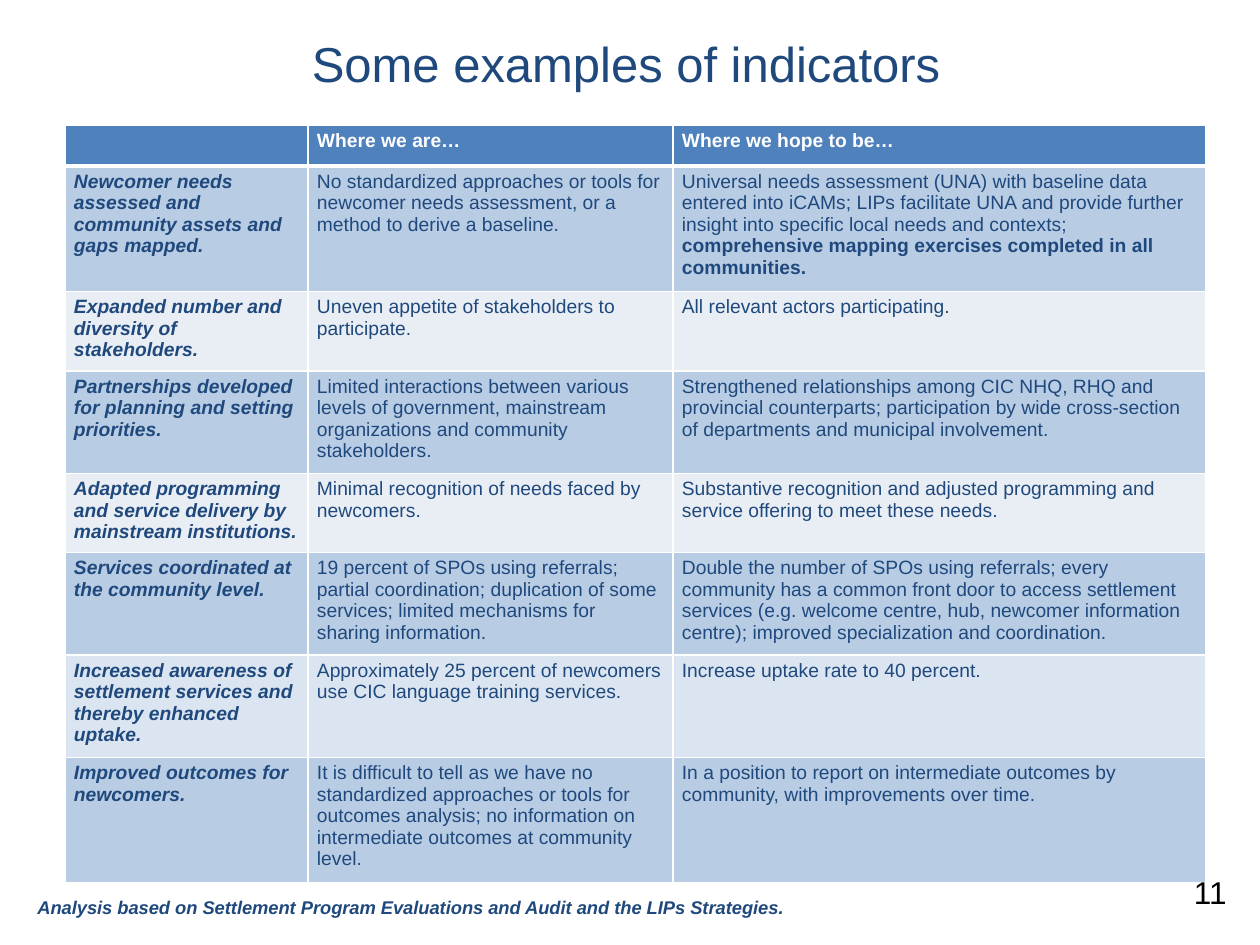
from dataclasses import dataclass

from lxml.etree import SubElement
from pptx import Presentation
from pptx.dml.color import RGBColor
from pptx.enum.text import MSO_ANCHOR, PP_ALIGN
from pptx.oxml.ns import qn
from pptx.util import Emu, Pt

PIXEL = 914400 // 126
NAVY = "1F497D"
WHITE = "FFFFFF"
HEADER_FILL = "4F81BD"
BLUE_BAND = "B8CCE4"
GREY_BAND = "E9EDF4"
PALE_BAND = "DBE5F1"
COLUMN_WIDTHS = [243, 365, 533]
HEADER_HEIGHT = 41
HEADINGS = ["", "Where we are…", "Where we hope to be…"]


@dataclass
class Box:
    left: int
    top: int
    width: int
    height: int

    def lengths(self) -> list[Emu]:
        return [px(value) for value in (self.left, self.top, self.width, self.height)]


@dataclass
class Style:
    size: float
    color: str = NAVY
    bold: bool = False
    italic: bool = False


@dataclass
class Indicator:
    height: int
    fill: str
    name: str
    current: str
    goal: str
    emphasis: str = ""


INDICATORS = [
    Indicator(125, BLUE_BAND, "Newcomer needs assessed and community assets and gaps mapped.",
              "No standardized approaches or tools for newcomer needs assessment, "
              "or a method to derive a baseline.",
              "Universal needs assessment (UNA) with baseline data entered into iCAMs; "
              "LIPs facilitate UNA and provide further insight into specific local needs "
              "and contexts; ",
              "comprehensive mapping exercises completed in all communities."),
    Indicator(79, GREY_BAND, "Expanded number and diversity of stakeholders.",
              "Uneven appetite of stakeholders to participate.",
              "All relevant actors participating."),
    Indicator(101, BLUE_BAND, "Partnerships developed for planning and setting priorities.",
              "Limited interactions between various levels of government, mainstream "
              "organizations and community stakeholders.",
              "Strengthened relationships among CIC NHQ, RHQ and provincial counterparts; "
              "participation by wide cross-section of departments and municipal involvement."),
    Indicator(78, GREY_BAND,
              "Adapted programming and service delivery by mainstream institutions.",
              "Minimal recognition of needs faced by newcomers.",
              "Substantive recognition and adjusted programming and service offering "
              "to meet these needs."),
    Indicator(102, BLUE_BAND, "Services coordinated at the community level.",
              "19 percent of SPOs using referrals; partial coordination; duplication of some "
              "services; limited mechanisms for sharing information.",
              "Double the number of SPOs using referrals; every community has a common front "
              "door to access settlement services (e.g. welcome centre, hub, newcomer "
              "information centre); improved specialization and coordination."),
    Indicator(101, PALE_BAND,
              "Increased awareness of settlement services and thereby enhanced uptake.",
              "Approximately 25 percent of newcomers use CIC language training services.",
              "Increase uptake rate to 40 percent."),
    Indicator(124, BLUE_BAND, "Improved outcomes for newcomers.",
              "It is difficult to tell as we have no standardized approaches or tools for "
              "outcomes analysis; no information on intermediate outcomes at community level.",
              "In a position to report on intermediate outcomes by community, "
              "with improvements over time."),
]


def px(value: int) -> Emu:
    return Emu(value * PIXEL)


def rgb(color: str) -> RGBColor:
    return RGBColor.from_string(color)


def format_run(run, style: Style) -> None:
    font = run.font
    font.name = "Arial"
    font.size = Pt(style.size)
    font.bold = style.bold
    font.italic = style.italic
    font.color.rgb = rgb(style.color)


def write(text_frame, text: str, style: Style, alignment=PP_ALIGN.LEFT) -> None:
    text_frame.text = text
    text_frame.word_wrap = True
    paragraph = text_frame.paragraphs[0]
    paragraph.alignment = alignment
    for run in paragraph.runs:
        format_run(run, style)


def add_text(slide, box: Box, text: str, style: Style, alignment=PP_ALIGN.LEFT) -> None:
    shape = slide.shapes.add_textbox(*box.lengths())
    write(shape.text_frame, text, style, alignment)


def add_border(cell, side: str, points: int) -> None:
    line = SubElement(cell._tc.get_or_add_tcPr(), qn(f"a:ln{side}"), w=str(Pt(points)))
    fill = SubElement(line, qn("a:solidFill"))
    SubElement(fill, qn("a:srgbClr"), val=WHITE)


def fill_cell(cell, text: str, style: Style, fill: str, top: int, bottom: int) -> None:
    cell.margin_left = cell.margin_right = px(9)
    cell.margin_top = cell.margin_bottom = px(5)
    cell.vertical_anchor = MSO_ANCHOR.TOP
    for side, points in {"L": 1, "R": 1, "T": top, "B": bottom}.items():
        add_border(cell, side, points)
    cell.fill.solid()
    cell.fill.fore_color.rgb = rgb(fill)
    if text:
        write(cell.text_frame, text, style)
    else:
        paragraph = cell.text_frame.paragraphs[0]
        SubElement(paragraph._p, qn("a:endParaRPr"), sz=str(int(style.size * 100)))


def add_indicator_table(slide) -> None:
    heights = [HEADER_HEIGHT] + [indicator.height for indicator in INDICATORS]
    box = Box(65, 125, sum(COLUMN_WIDTHS), sum(heights))
    table = slide.shapes.add_table(len(heights), len(COLUMN_WIDTHS), *box.lengths()).table
    table.horz_banding = False
    for column, width in zip(table.columns, COLUMN_WIDTHS):
        column.width = px(width)
    for row, height in zip(table.rows, heights):
        row.height = px(height)

    header_style = Style(11, WHITE, bold=True)
    body_style = Style(11)
    name_style = Style(11, bold=True, italic=True)
    for cell, heading in zip(table.rows[0].cells, HEADINGS):
        fill_cell(cell, heading, header_style, HEADER_FILL, 1, 3)
    for index, indicator in enumerate(INDICATORS, start=1):
        texts = [indicator.name, indicator.current, indicator.goal]
        styles = [name_style, body_style, body_style]
        for cell, text, style in zip(table.rows[index].cells, texts, styles):
            fill_cell(cell, text, style, indicator.fill, 3 if index == 1 else 1, 1)
        if indicator.emphasis:
            run = table.cell(index, 2).text_frame.paragraphs[0].add_run()
            run.text = indicator.emphasis
            format_run(run, Style(11, bold=True))


def main() -> None:
    presentation = Presentation()
    presentation.slide_width = px(1260)
    presentation.slide_height = px(945)
    slide = presentation.slides.add_slide(presentation.slide_layouts[5])

    title = slide.shapes.title
    title.left, title.top, title.width, title.height = Box(59, 0, 1134, 125).lengths()
    title.text_frame.vertical_anchor = MSO_ANCHOR.MIDDLE
    write(title.text_frame, "Some examples of indicators", Style(28), PP_ALIGN.CENTER)

    add_text(slide, Box(25, 890, 1121, 35),
             "Analysis based on Settlement Program Evaluations and Audit and the LIPs Strategies.",
             Style(10.5, bold=True, italic=True))
    add_indicator_table(slide)
    add_text(slide, Box(945, 867, 294, 50), "11", Style(18, "000000"), PP_ALIGN.RIGHT)
    presentation.save("out.pptx")


if __name__ == "__main__":
    main()
